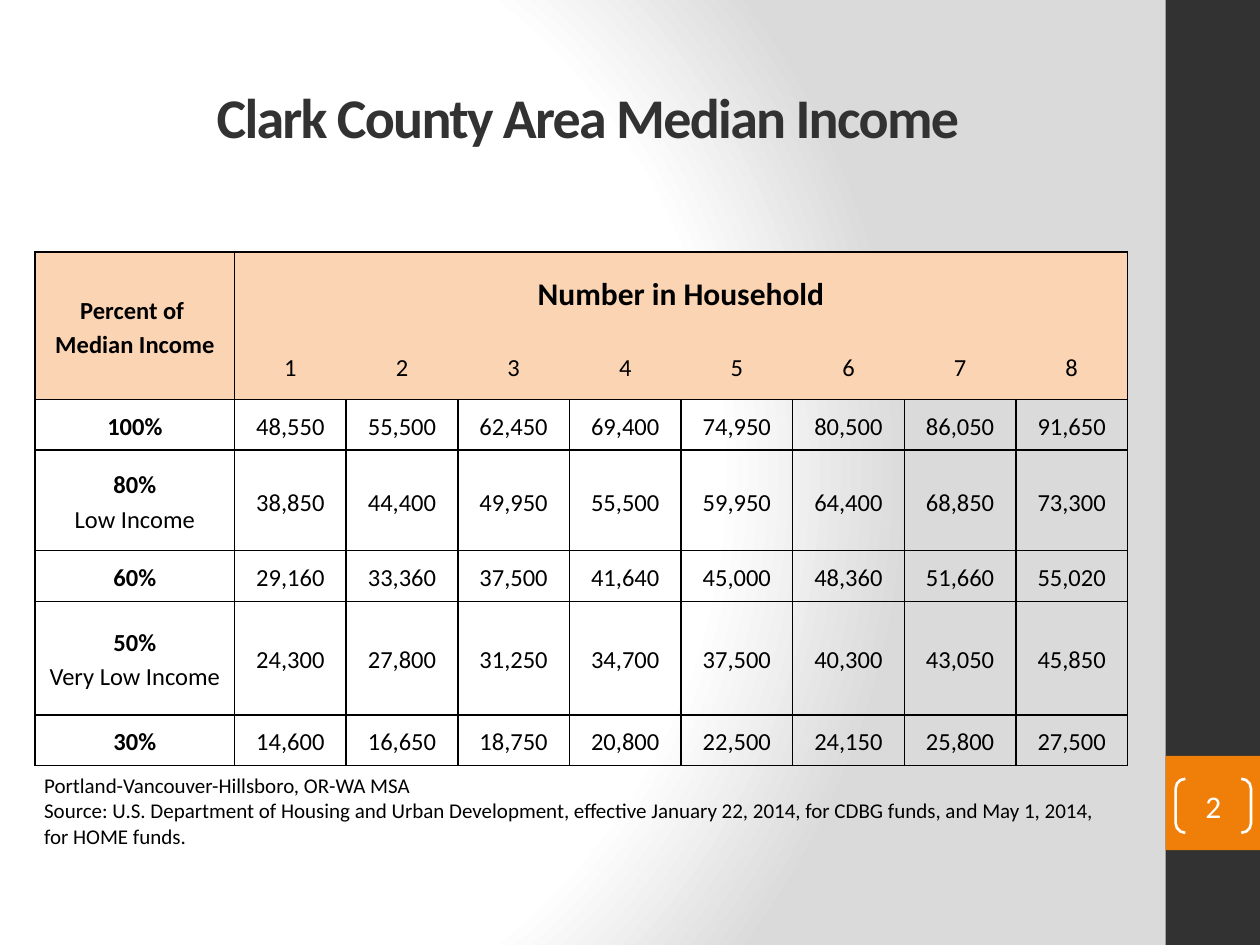
from dataclasses import dataclass

from lxml.etree import SubElement
from pptx import Presentation
from pptx.dml.color import RGBColor
from pptx.enum.shapes import MSO_SHAPE as Preset
from pptx.enum.text import MSO_ANCHOR as Anchor, PP_ALIGN as Align
from pptx.oxml import parse_xml
from pptx.oxml.ns import nsdecls, qn
from pptx.util import Cm, Pt


@dataclass(frozen=True)
class Theme:
    font: str = "Calibri"
    dark: str = "323232"
    accent: str = "F07F09"
    header: str = "FBD4B4"
    black: str = "000000"
    white: str = "FFFFFF"
    shade: str = "DADADA"
    title_size: int = 32
    heading_size: int = 18
    body_size: int = 14
    note_size: int = 12


theme = Theme()


def add_text(paragraph, text, size, color, bold=False, align=Align.LEFT):
    paragraph.alignment = align
    run = paragraph.add_run()
    run.text = text
    run.font.name = theme.font
    run.font.size = Pt(size)
    run.font.bold = bold
    run.font.color.rgb = RGBColor.from_string(color)
    return run


def fill_cell(cell, lines, sides, fill):
    cell.vertical_anchor = Anchor.MIDDLE
    cell.margin_left = cell.margin_right = Cm(0.18)
    cell.margin_top = cell.margin_bottom = 0
    for index, (text, size, bold) in enumerate(lines):
        frame = cell.text_frame
        paragraph = frame.add_paragraph() if index else frame.paragraphs[0]
        paragraph.line_spacing = 1.15
        add_text(paragraph, text, size, theme.black, bold, Align.CENTER)
    properties = cell._tc.get_or_add_tcPr()
    for side in "LRTB":
        line = SubElement(properties, qn(f"a:ln{side}"), w=str(Pt(1)))
        if side in sides:
            solid = SubElement(line, qn("a:solidFill"))
            SubElement(solid, qn("a:srgbClr"), val=theme.black)
        else:
            SubElement(line, qn("a:noFill"))
    if fill:
        cell.fill.solid()
        cell.fill.fore_color.rgb = RGBColor.from_string(fill)
    else:
        cell.fill.background()


presentation = Presentation()
presentation.slide_width = Cm(25.4)
presentation.slide_height = Cm(19.05)
slide = presentation.slides.add_slide(presentation.slide_layouts[6])

slide.background.fill.gradient()
gradient = slide.element.find(".//" + qn("a:gradFill"))
stops = [(0, theme.white), (75, theme.white), (100, theme.shade)]
stop_xml = "".join(
    f'<a:gs pos="{position * 1000}"><a:srgbClr val="{color}"/></a:gs>'
    for position, color in stops
)
gradient.getparent().replace(gradient, parse_xml(
    f'<a:gradFill {nsdecls("a")} rotWithShape="1"><a:gsLst>{stop_xml}</a:gsLst>'
    '<a:path path="circle">'
    '<a:fillToRect l="20000" t="50000" r="100000" b="50000"/>'
    '</a:path></a:gradFill>'
))

for top, height, color in [(0, 19.05, theme.dark), (15.24, 1.9, theme.accent)]:
    band = slide.shapes.add_shape(
        Preset.RECTANGLE, Cm(23.5), Cm(top), Cm(1.9), Cm(height))
    band.shadow.inherit = False
    band.fill.solid()
    band.fill.fore_color.rgb = RGBColor.from_string(color)
    band.line.fill.background()

title = slide.shapes.add_textbox(Cm(1.27), Cm(0.76), Cm(21.16), Cm(3.18))
title.text_frame.word_wrap = True
title.text_frame.vertical_anchor = Anchor.MIDDLE
title_run = add_text(title.text_frame.paragraphs[0], "Clark County Area Median Income",
                     theme.title_size, theme.dark, True, Align.CENTER)
title_run.font._element.set("spc", "-100")

income_rows = [
    (["100%"], "48,550 55,500 62,450 69,400 74,950 80,500 86,050 91,650"),
    (["80%", "Low Income"], "38,850 44,400 49,950 55,500 59,950 64,400 68,850 73,300"),
    (["60%"], "29,160 33,360 37,500 41,640 45,000 48,360 51,660 55,020"),
    (["50%", "Very Low Income"], "24,300 27,800 31,250 34,700 37,500 40,300 43,050 45,850"),
    (["30%"], "14,600 16,650 18,750 20,800 22,500 24,150 25,800 27,500"),
]
column_widths = [4.02] + [2.25] * 8
row_heights = [1.61, 1.25, 1.02, 2.03, 1.02, 2.29, 1.02]
table = slide.shapes.add_table(
    len(row_heights), len(column_widths), Cm(0.71), Cm(5.08),
    Cm(sum(column_widths)), Cm(sum(row_heights))).table
table.first_row = table.horz_banding = False
for column, width in zip(table.columns, column_widths):
    column.width = Cm(width)
for row, height in zip(table.rows, row_heights):
    row.height = Cm(height)
table.cell(0, 0).merge(table.cell(1, 0))
table.cell(0, 1).merge(table.cell(0, 8))

corner_lines = [(text, theme.body_size, True) for text in ("Percent of ", "Median Income")]
heading_lines = [("Number in Household", theme.heading_size, True)]
fill_cell(table.cell(0, 0), corner_lines, "LRTB", theme.header)
fill_cell(table.cell(1, 0), [], "LRB", theme.header)
for size in range(1, 9):
    edges = {1: "L", 8: "R"}.get(size, "")
    heading = heading_lines if size == 1 else []
    heading_edges = "LR" if size == 1 else edges
    fill_cell(table.cell(0, size), heading, "T" + heading_edges, theme.header)
    fill_cell(table.cell(1, size), [(str(size), theme.body_size, False)],
              "B" + edges, theme.header)

for row, (labels, incomes) in enumerate(income_rows, 2):
    label_lines = [(text, theme.body_size, index == 0) for index, text in enumerate(labels)]
    fill_cell(table.cell(row, 0), label_lines, "LRTB", None)
    for column, income in enumerate(incomes.split(), 1):
        fill_cell(table.cell(row, column), [(income, theme.body_size, False)], "LRTB", None)

number = slide.shapes.add_shape(
    Preset.DOUBLE_BRACKET, Cm(23.7), Cm(15.7), Cm(1.52), Cm(1.09))
number.adjustments[0] = 0.18
number.shadow.inherit = False
number.fill.background()
number.line.color.rgb = RGBColor.from_string(theme.white)
number.line.width = Pt(1.5)
frame = number.text_frame
frame.margin_left = frame.margin_right = frame.margin_top = frame.margin_bottom = 0
frame.vertical_anchor = Anchor.MIDDLE
add_text(frame.paragraphs[0], "2", theme.heading_size, theme.white, align=Align.CENTER)

note = slide.shapes.add_textbox(Cm(0.64), Cm(15.44), Cm(22.23), Cm(1.8))
note.text_frame.word_wrap = True
note.text_frame.vertical_anchor = Anchor.MIDDLE
add_text(note.text_frame.paragraphs[0], "Portland-Vancouver-Hillsboro, OR-WA MSA",
         theme.note_size, theme.black)
add_text(note.text_frame.add_paragraph(),
         "Source: U.S. Department of Housing and Urban Development, effective "
         "January 22, 2014, for CDBG funds, and May 1, 2014, for HOME funds.",
         theme.note_size, theme.black)

presentation.save("out.pptx")
